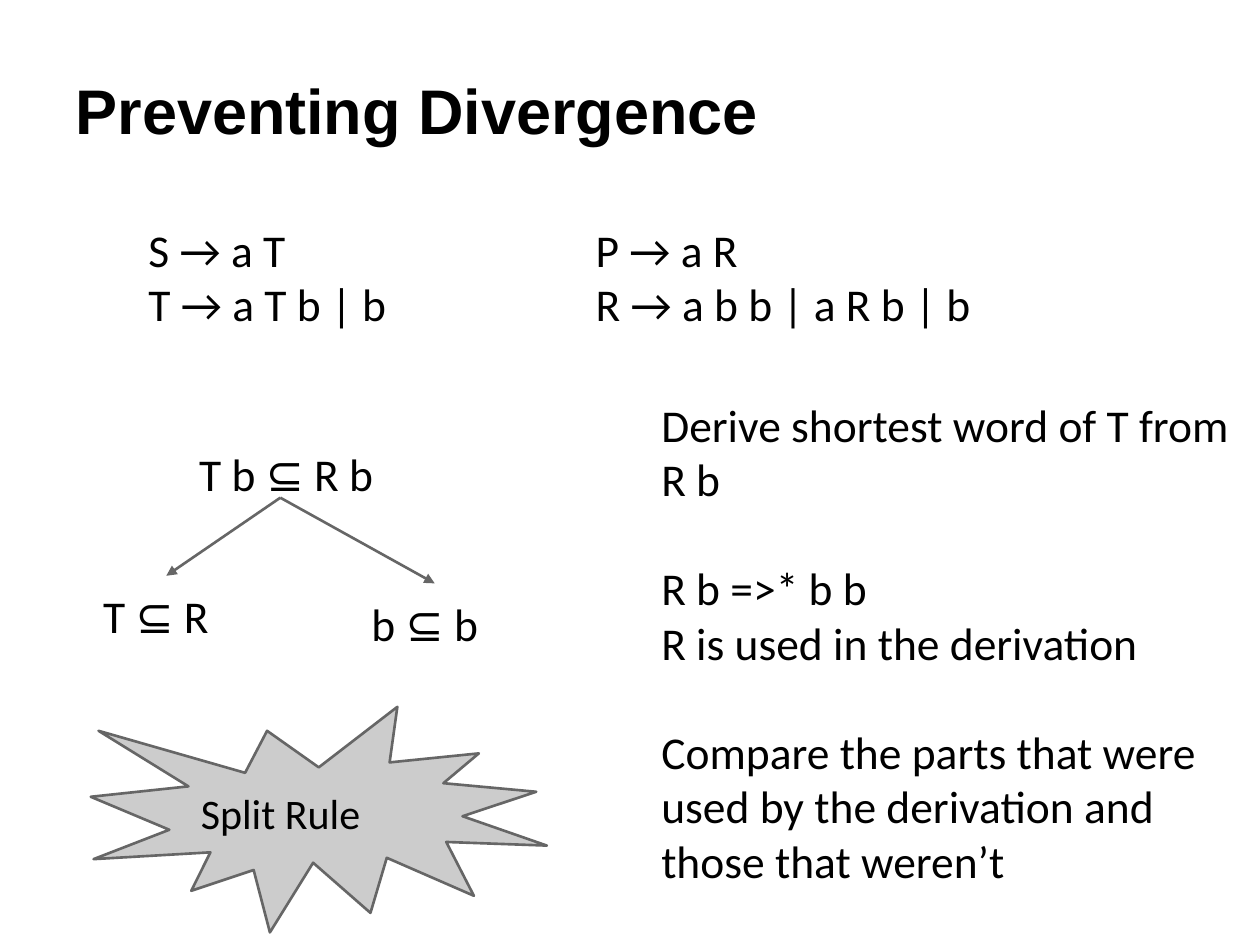
from lxml.etree import SubElement
from pptx import Presentation
from pptx.dml.color import RGBColor
from pptx.enum.shapes import MSO_CONNECTOR, MSO_SHAPE
from pptx.enum.text import MSO_ANCHOR, MSO_AUTO_SIZE, PP_ALIGN
from pptx.oxml.ns import qn
from pptx.util import Inches, Pt

# Content: boxes are (left, top, width, height) in inches
TITLE = ("Preventing Divergence", (0.5, 0.3, 9, 0.97))
RULES = [
    ["S → a T", "T → a T b | b"],
    ["P → a R", "R → a b b | a R b | b"],
]
ROOT = ("T b ⊆ R b", (1.24, 3.44, 1.97, 0.51))
LEAVES = [
    ("T ⊆ R", (0.72, 4.57, 1.2, 0.51)),
    ("b ⊆ b", (2.85, 4.63, 1.2, 0.51)),
]
STEPS = [
    ["Derive shortest word of T from R b"],
    ["R b =>* b b", "R is used in the derivation"],
    ["Compare the parts that were used by the derivation and those that weren’t"],
]
STEP_BOX = (5.15, 3.05, 4.98, 4.45)
BURST = ("Split Rule", (0.72, 5.61, 3.62, 1.79))

THEME = {
    "ink": RGBColor(0, 0, 0),
    "line": RGBColor(0x66, 0x66, 0x66),
    "fill": RGBColor(0xCC, 0xCC, 0xCC),
    "head": ("Arial", 36, True),
    "body": ("Calibri", 26, False),
    "label": ("Calibri", 24, False),
    "gap": Pt(31),
    "weight": Pt(1.5),
    "inset": 0.1,
}


def place(box):
    return [Inches(n) for n in box]


def write(shape, groups, style, anchor=MSO_ANCHOR.TOP, indent=0):
    """Fill a shape with groups of lines, with a gap between groups."""
    frame = shape.text_frame
    frame.word_wrap = True
    frame.auto_size = MSO_AUTO_SIZE.NONE
    frame.vertical_anchor = anchor
    inset = Inches(THEME["inset"])
    frame.margin_top = frame.margin_right = frame.margin_bottom = inset
    frame.margin_left = inset + Inches(indent)
    face, size, bold = THEME[style]
    lines = [(text, i > 0 and j == 0)
             for i, group in enumerate(groups) for j, text in enumerate(group)]
    for n, (text, gap) in enumerate(lines):
        para = frame.add_paragraph() if n else frame.paragraphs[0]
        para.alignment = PP_ALIGN.LEFT
        para.space_before = THEME["gap"] if gap else Pt(0)
        run = para.add_run()
        run.text = text
        font = run.font
        font.name, font.size, font.bold = face, Pt(size), bold
        font.color.rgb = THEME["ink"]


def add_text(slide, box, groups, indent=0):
    shape = slide.shapes.add_textbox(*place(box))
    write(shape, groups, "body", indent=indent)
    return shape


def add_arrow(slide, start, end):
    """Join the bottom of one box to the top of another."""
    arrow = slide.shapes.add_connector(MSO_CONNECTOR.STRAIGHT, 0, 0, 0, 0)
    arrow.begin_connect(start, 2)
    arrow.end_connect(end, 0)
    arrow.line.color.rgb = THEME["line"]
    arrow.line.width = THEME["weight"]
    tail = SubElement(arrow.line._get_or_add_ln(), qn("a:tailEnd"))
    tail.set("type", "triangle")
    SubElement(arrow._element.spPr, qn("a:effectLst"))


def main():
    deck = Presentation()
    deck.slide_width, deck.slide_height = Inches(10), Inches(7.5)
    slide = deck.slides.add_slide(deck.slide_layouts[5])

    # Title
    text, box = TITLE
    title = slide.shapes.title
    title.left, title.top, title.width, title.height = place(box)
    write(title, [[text]], "head", MSO_ANCHOR.BOTTOM)

    # Grammar rules, side by side
    for col, lines in enumerate(RULES):
        add_text(slide, (1.08 + 3.55 * col, 1.66, 3.44, 1.3), [lines])

    # Split tree
    text, box = ROOT
    root = add_text(slide, box, [[text]], indent=0.24)
    for text, box in LEAVES:
        add_arrow(slide, root, add_text(slide, box, [[text]]))

    # Explanation
    add_text(slide, STEP_BOX, STEPS)

    # Burst with the rule name
    text, box = BURST
    burst = slide.shapes.add_shape(MSO_SHAPE.EXPLOSION1, *place(box))
    burst.shadow.inherit = False
    burst.fill.solid()
    burst.fill.fore_color.rgb = THEME["fill"]
    burst.line.color.rgb = THEME["line"]
    burst.line.width = THEME["weight"]
    write(burst, [[text]], "label", MSO_ANCHOR.MIDDLE)

    deck.save("out.pptx")


if __name__ == "__main__":
    main()
